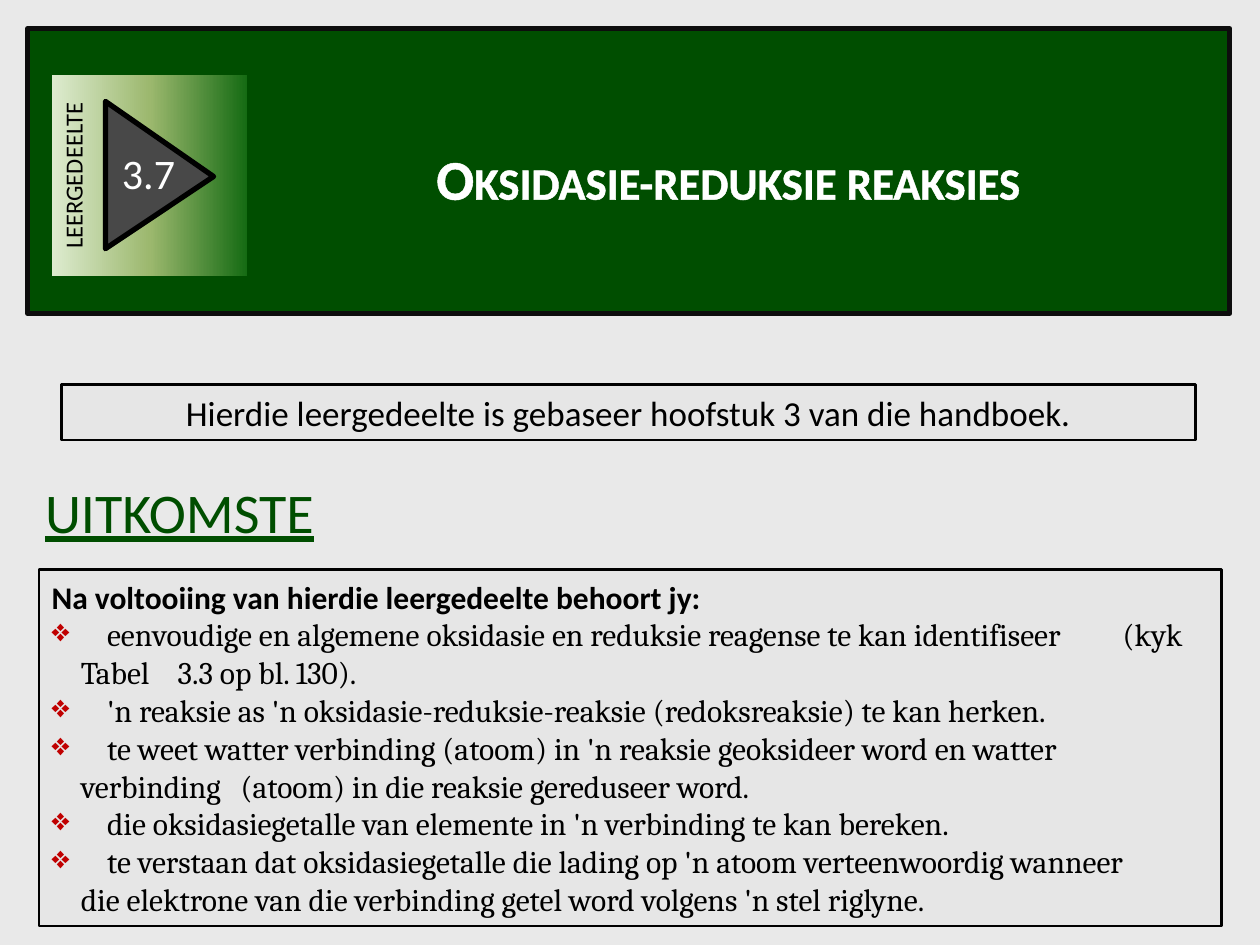
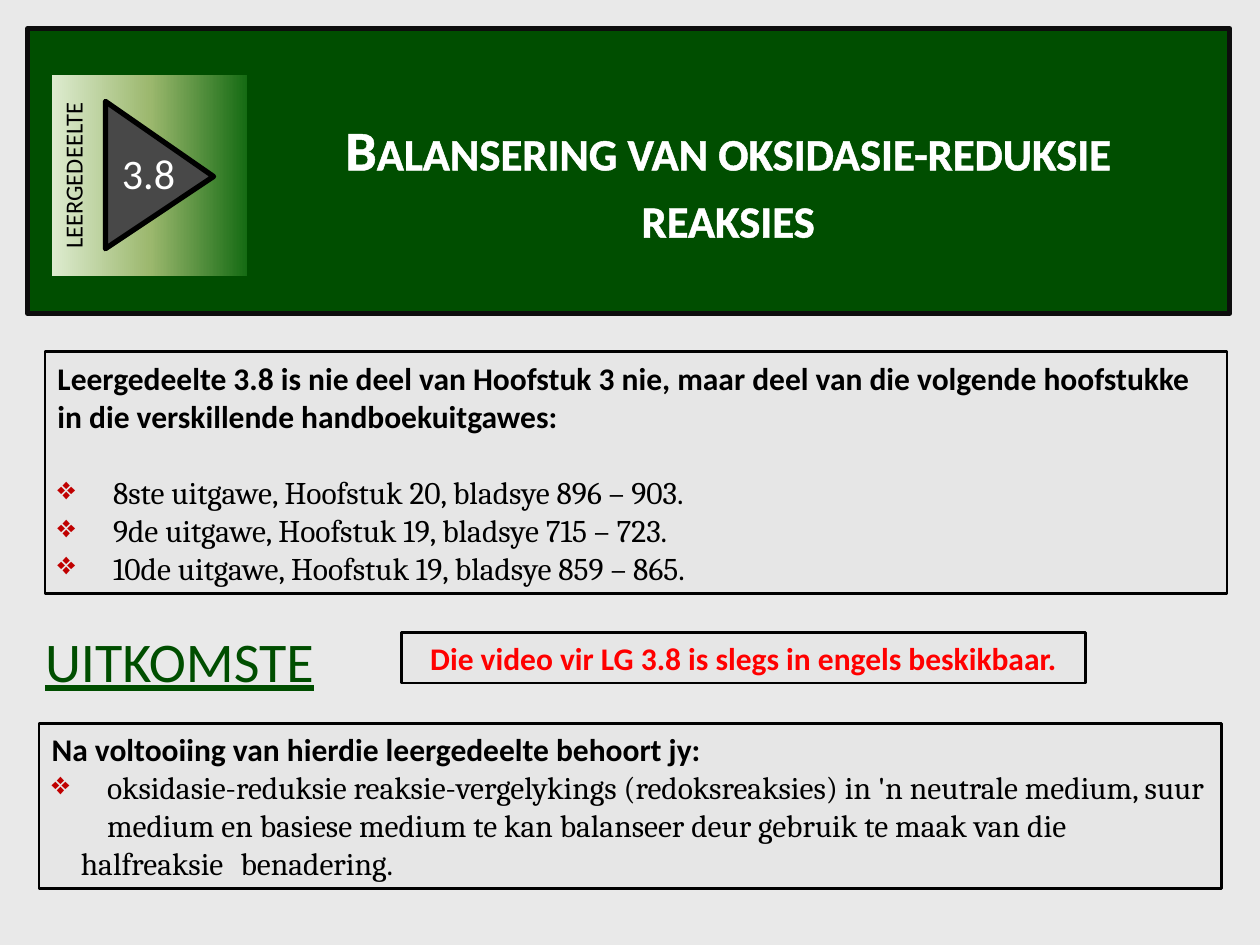
from lxml.etree import SubElement
from pptx import Presentation
from pptx.dml.color import RGBColor
from pptx.enum.shapes import MSO_SHAPE as Shape
from pptx.enum.text import MSO_ANCHOR as Anchor, MSO_AUTO_SIZE as AutoSize, PP_ALIGN as Align
from pptx.oxml.ns import qn
from pptx.util import Cm, Pt

GREEN, GREY, WHITE, BLACK, RED = "004E00", "E6E6E6", "FFFFFF", "000000", "FF0000"
OUTCOMES_HEADING = "Na voltooiing van hierdie leergedeelte behoort jy:"


def colour(hex_string):
    return RGBColor.from_string(hex_string)


def place(shape, left, top, width, height):
    shape.left, shape.top = Cm(left), Cm(top)
    shape.width, shape.height = Cm(width), Cm(height)


class StudySection:
    """Holds the style and the page being filled."""

    def __init__(self, deck):
        self.deck = deck
        self.page = None

    def style(self, para, size, ink, font="Calibri", align=Align.LEFT, bold=False):
        para.alignment = align
        for span in para.runs:
            span.font.name, span.font.size = font, Pt(size)
            span.font.bold = bold
            span.font.color.rgb = colour(ink)

    def outline(self, para, ink, width):
        for span in para.runs:
            line = span.font._element.makeelement(qn("a:ln"), {"w": str(Pt(width))})
            fill = SubElement(line, qn("a:solidFill"))
            SubElement(fill, qn("a:srgbClr"), val=ink)
            span.font._element.insert(0, line)

    def bullet(self, para):
        props = para._p.get_or_add_pPr()
        props.set("marL", str(Cm(0.59)))
        props.set("indent", str(-Cm(0.59)))
        SubElement(SubElement(props, qn("a:buClr")), qn("a:srgbClr"), val="C00000")
        SubElement(props, qn("a:buChar"), char="❖")
        tabs = SubElement(props, qn("a:tabLst"))
        SubElement(tabs, qn("a:tab"), pos=str(Cm(1.12)), algn="l")

    def shape(self, kind, place_at, fill=None, line=None, width=1.5):
        box = self.page.shapes.add_shape(kind, *map(Cm, place_at))
        box.shadow.inherit = False
        if fill:
            box.fill.solid()
            box.fill.fore_color.rgb = colour(fill)
        if line:
            box.line.color.rgb = colour(line)
            box.line.width = Pt(width)
        else:
            box.line.fill.background()
        return box

    def text(self, place_at, words, size, ink, wrap=True):
        box = self.page.shapes.add_textbox(*map(Cm, place_at))
        box.text_frame.word_wrap = wrap
        box.text_frame.text = words
        para = box.text_frame.paragraphs[0]
        self.style(para, size, ink)
        return para

    def title(self, words, top, height):
        box = self.page.shapes.title
        self.page.shapes._spTree.append(box._element)  # bring in front of the band
        place(box, 5.36, top, 18.64, height)
        frame = box.text_frame
        frame.text = words
        frame.word_wrap, frame.auto_size = True, AutoSize.NONE
        frame.vertical_anchor = Anchor.TOP
        para = frame.paragraphs[0]
        self.style(para, 32, WHITE, align=Align.CENTER, bold=True)
        para.runs[0].font._element.set("cap", "small")
        self.outline(para, WHITE, 0.75)

    def badge(self, number):
        # Gradient plate with the sideways label
        plate = self.shape(Shape.RECTANGLE, (0.99, 1.57, 4.06, 3.94))
        plate.rotation = 270
        plate.fill.gradient()
        plate.fill.gradient_angle = 270
        stop_list = plate._element.spPr.find(".//" + qn("a:gsLst"))
        stop_list.append(stop_list.makeelement(qn("a:gs"), {"pos": "0"}))
        stops = (("DDEBCF", 0), ("9CB86E", 0.5), ("156B13", 1))
        for stop, (ink, position) in zip(plate.fill.gradient_stops, stops):
            stop.color.rgb = colour(ink)
            stop.position = position
        plate.text_frame.text = "LEERGEDEELTE"
        plate.text_frame.vertical_anchor = Anchor.TOP
        self.style(plate.text_frame.paragraphs[0], 14, BLACK, align=Align.CENTER)

        # Arrowhead with the section number
        pointer = self.shape(Shape.ISOSCELES_TRIANGLE, (1.73, 2.44, 2.97, 2.18),
                             "484848", BLACK, 3)
        pointer.rotation = 90
        pointer.adjustments[0] = 0.51
        self.text((2.21, 2.84, 1.6, 1.27), number, 24, WHITE, wrap=False)

    def start(self, number, title, title_top, title_height):
        self.page = self.deck.slides.add_slide(self.deck.slide_layouts[5])
        self.page.background.fill.solid()
        self.page.background.fill.fore_color.rgb = colour("E9E9E9")
        self.shape(Shape.RECTANGLE, (0.56, 0.58, 24.23, 5.74), GREEN, "0D0D0D", 3)
        self.title(title, title_top, title_height)
        self.badge(number)

    def heading(self, top):
        para = self.text((0.66, top, 6.78, 1.63), "UITKOMSTE", 32, GREEN)
        para.runs[0].font.underline = True
        self.outline(para, BLACK, 0.25)

    def panel(self, place_at, words):
        box = self.shape(Shape.RECTANGLE, place_at, GREY, BLACK)
        frame = box.text_frame
        frame.word_wrap, frame.vertical_anchor = True, Anchor.MIDDLE
        frame.text = words
        return frame

    def notice(self, place_at, words, size, ink=BLACK, bold=False):
        frame = self.panel(place_at, words)
        self.style(frame.paragraphs[0], size, ink, align=Align.CENTER, bold=bold)

    def list_panel(self, place_at, heading, items, gap=0):
        frame = self.panel(place_at, heading)
        self.style(frame.paragraphs[0], 18, BLACK, bold=True)
        frame.paragraphs[0].space_after = Pt(gap)
        for item in items:
            para = frame.add_paragraph()
            para.text = "\t" + item
            self.style(para, 18, BLACK, font="Cambria")
            self.bullet(para)


def main():
    deck = Presentation()
    deck.slide_width, deck.slide_height = Cm(25.4), Cm(19.05)
    section = StudySection(deck)

    # Section 3.7
    section.start("3.7", "Oksidasie-reduksie reaksies", 2.77, 1.63)
    section.heading(9.5)
    section.list_panel((0.79, 11.48, 23.83, 7.19), OUTCOMES_HEADING, [
        "eenvoudige en algemene oksidasie en reduksie reagense te kan identifiseer "
        "\t(kyk Tabel \t3.3 op bl. 130).",
        "'n reaksie as 'n oksidasie-reduksie-reaksie (redoksreaksie) te kan herken.",
        "te weet watter verbinding (atoom) in 'n reaksie geoksideer word en watter "
        "\tverbinding \t(atoom) in die reaksie gereduseer word.",
        "die oksidasiegetalle van elemente in 'n verbinding te kan bereken.",
        "te verstaan dat oksidasiegetalle die lading op 'n atoom verteenwoordig wanneer "
        "\tdie elektrone van die verbinding getel word volgens 'n stel riglyne.",
    ])
    section.notice((1.24, 7.75, 22.86, 1.12),
                   "Hierdie leergedeelte is gebaseer hoofstuk 3 van die handboek.", 20)

    # Section 3.8
    section.start("3.8", "Balansering van oksidasie-reduksie reaksies", 2.18, 3)
    section.heading(12.5)
    section.list_panel((0.79, 14.58, 23.83, 3.33), OUTCOMES_HEADING, [
        "oksidasie-reduksie reaksie-vergelykings (redoksreaksies) in 'n neutrale medium, suur "
        "\tmedium en basiese medium te kan balanseer deur gebruik te maak van die halfreaksie "
        "\tbenadering.",
    ])
    editions = (("8ste", 20, "896 – 903"), ("9de", 19, "715 – 723"), ("10de", 19, "859 – 865"))
    section.list_panel(
        (0.91, 7.09, 23.83, 4.88),
        "Leergedeelte 3.8 is nie deel van Hoofstuk 3 nie, maar deel van die volgende "
        "hoofstukke in die verskillende handboekuitgawes:",
        [f"{edition} uitgawe, Hoofstuk {chapter}, bladsye {pages}."
         for edition, chapter, pages in editions],
        gap=22)
    section.notice((8.1, 12.75, 13.79, 1.02),
                   "Die video vir LG 3.8 is slegs in engels beskikbaar.", 18, RED, bold=True)

    deck.save("out.pptx")


if __name__ == "__main__":
    main()
